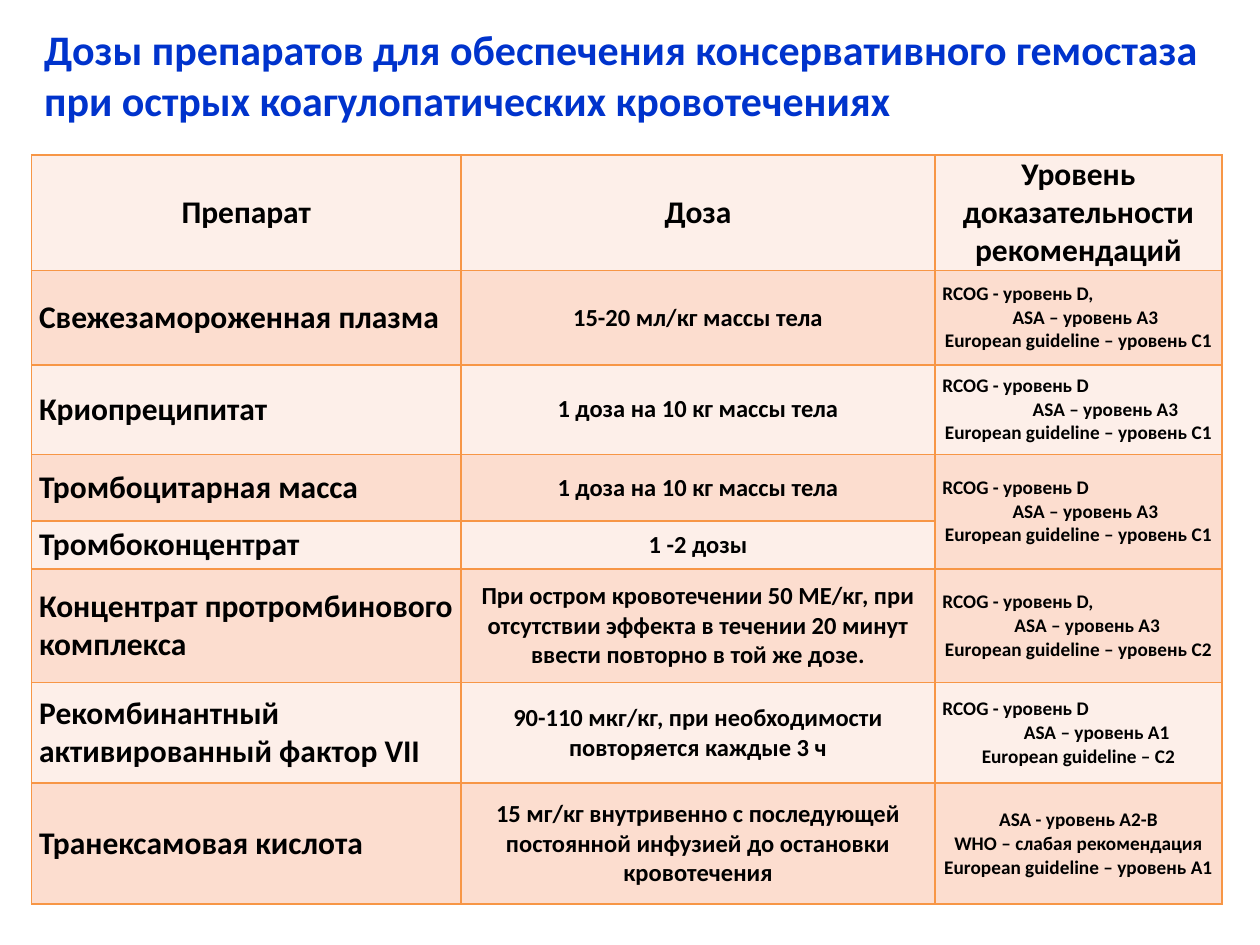
import lxml.etree
import pptx
import pptx.dml.color
import pptx.enum.text
import pptx.oxml.ns
import pptx.util

Inches = pptx.util.Inches
Align = pptx.enum.text.PP_ALIGN
Anchor = pptx.enum.text.MSO_ANCHOR
COLORS = {"title": "0033CC", "text": "000000", "border": "F79646",
          "light": "FDEFE9", "dark": "FCDDCF"}
WIDTH, HEIGHT = 10, 7.5
MARGIN = 0.025 * WIDTH


def write_text(frame, lines, size, color="text", align=Align.LEFT):
    """Write one paragraph per line; a line may be (text, alignment, left indent in inches)."""
    frame.word_wrap = True
    for number, line in enumerate(lines):
        text, line_align, indent = (line, align, 0) if isinstance(line, str) else line
        paragraph = frame.paragraphs[0] if number == 0 else frame.add_paragraph()
        paragraph.alignment = line_align
        if indent:
            paragraph._p.get_or_add_pPr().set("marL", str(Inches(indent)))
        run = paragraph.add_run()
        run.text = text
        run.font.name = "Calibri"
        run.font.size = pptx.util.Pt(size)
        run.font.bold = True
        run.font.color.rgb = pptx.dml.color.RGBColor.from_string(COLORS[color])


def draw_borders(cell, color, points):
    properties = cell._tc.get_or_add_tcPr()
    for side in ("lnL", "lnR", "lnT", "lnB"):
        line = lxml.etree.SubElement(properties, pptx.oxml.ns.qn("a:" + side),
                                     w=str(pptx.util.Pt(points)))
        fill = lxml.etree.SubElement(line, pptx.oxml.ns.qn("a:solidFill"))
        lxml.etree.SubElement(fill, pptx.oxml.ns.qn("a:srgbClr"), val=COLORS[color])


presentation = pptx.Presentation()
presentation.slide_width = Inches(WIDTH)
presentation.slide_height = Inches(HEIGHT)
slide = presentation.slides.add_slide(presentation.slide_layouts[5])

heading = slide.shapes.title
heading.left, heading.top = Inches(MARGIN), Inches(0.014 * WIDTH)
heading.width, heading.height = Inches(0.961 * WIDTH), Inches(0.12 * HEIGHT)
heading.text_frame.vertical_anchor = Anchor.TOP
heading.text_frame.auto_size = pptx.enum.text.MSO_AUTO_SIZE.NONE
write_text(heading.text_frame,
           ["Дозы препаратов для обеспечения консервативного гемостаза "
            "при острых коагулопатических кровотечениях"], size=24, color="title")

# Each evidence list: the first source stands left, the second is indented, the third centred.
doses = [
    ("Свежезамороженная плазма", "15-20 мл/кг массы тела",
     [("RCOG - уровень D,", Align.LEFT, 0), ("ASA – уровень A3", Align.CENTER, 0.11),
      "European guideline – уровень С1"]),
    ("Криопреципитат", "1 доза на 10 кг массы тела",
     [("RCOG - уровень D", Align.LEFT, 0), ("ASA – уровень A3", Align.CENTER, 0.43),
      "European guideline – уровень С1"]),
    ("Тромбоцитарная масса", "1 доза на 10 кг массы тела",
     [("RCOG - уровень D", Align.LEFT, 0), ("ASA – уровень A3", Align.CENTER, 0.11),
      "European guideline – уровень С1"]),
    ("Тромбоконцентрат", "1 -2 дозы", []),
    ("Концентрат протромбинового комплекса",
     "При остром кровотечении 50 МЕ/кг, при отсутствии эффекта в течении 20 минут "
     "ввести повторно в той же дозе.",
     [("RCOG - уровень D,", Align.LEFT, 0), ("ASA – уровень A3", Align.CENTER, 0.14),
      "European guideline – уровень С2"]),
    ("Рекомбинантный активированный фактор VII",
     "90-110 мкг/кг, при необходимости повторяется каждые 3 ч",
     [("RCOG - уровень D", Align.LEFT, 0), ("ASA – уровень A1", Align.CENTER, 0.29),
      "European guideline – С2"]),
    ("Транексамовая кислота",
     "15 мг/кг внутривенно с последующей постоянной инфузией до остановки кровотечения",
     ["ASA - уровень А2-В", "WHO – слабая рекомендация",
      "European guideline – уровень А1"]),
]
headers = ("Препарат", "Доза", "Уровень доказательности рекомендаций")
column_widths = (3.41, 3.76, 2.28)
row_heights = (0.91, 0.75, 0.71, 0.53, 0.38, 0.9, 0.8, 0.96)
column_formats = ((18, Align.LEFT), (14, Align.CENTER), (11, Align.CENTER))

dose_table = slide.shapes.add_table(
    len(row_heights), len(column_widths), Inches(MARGIN), Inches(0.164 * HEIGHT),
    Inches(sum(column_widths)), Inches(sum(row_heights))).table
dose_table.first_row = False
dose_table.horz_banding = False
for column, width in zip(dose_table.columns, column_widths):
    column.width = Inches(width)
for row, height in zip(dose_table.rows, row_heights):
    row.height = Inches(height)

for row_number, entries in enumerate([headers] + doses):
    for column_number, entry in enumerate(entries):
        cell = dose_table.cell(row_number, column_number)
        draw_borders(cell, "border", 1)
        cell.fill.solid()
        cell.fill.fore_color.rgb = pptx.dml.color.RGBColor.from_string(
            COLORS["dark" if row_number % 2 else "light"])
        cell.vertical_anchor = Anchor.MIDDLE
        cell.margin_left = cell.margin_right = Inches(0.06)
        cell.margin_top = cell.margin_bottom = 0
        size, align = column_formats[column_number] if row_number else (18, Align.CENTER)
        write_text(cell.text_frame, [entry] if isinstance(entry, str) else entry,
                   size=size, align=align)

# Platelet mass and platelet concentrate share one evidence cell.
dose_table.cell(3, 2).merge(dose_table.cell(4, 2))

presentation.save("out.pptx")
